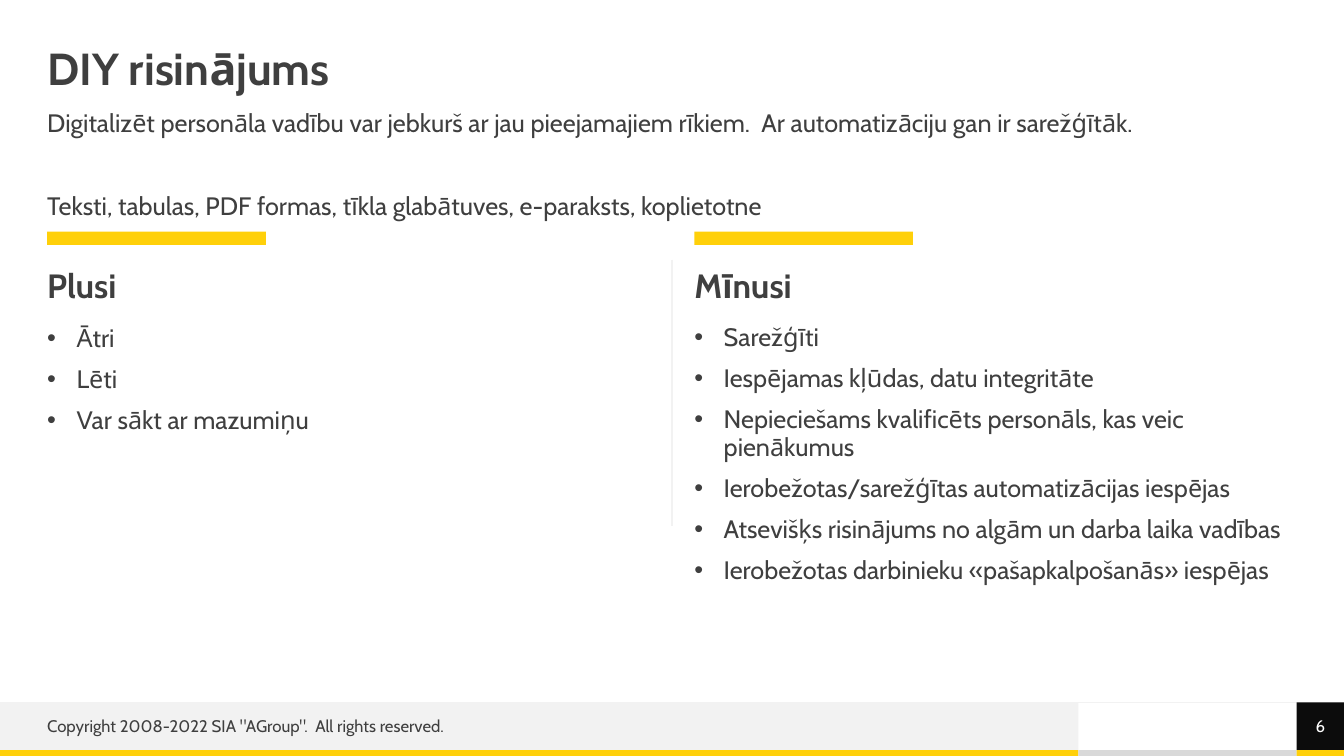
import pptx
import pptx.util
import pptx.dml.color
import pptx.enum.shapes
import pptx.enum.text
import pptx.oxml
import pptx.oxml.ns

Cm = pptx.util.Cm
Pt = pptx.util.Pt
ALIGN = pptx.enum.text.PP_ALIGN
ANCHOR = pptx.enum.text.MSO_ANCHOR

COLORS = {
    "text": "3F3F3F",
    "yellow": "FFD00A",
    "pale": "F2F2F2",
    "gray": "D9D9D9",
    "black": "0C0C0C",
    "white": "FFFFFF",
}
WIDTH, HEIGHT = 33.87, 19.05
MARGIN = 1.19
STRIP = 0.15                      # thin band along the bottom edge
FOOTER_TOP, FOOTER_WIDTH = 17.7, 27.18
BADGE_LEFT = WIDTH - MARGIN
COLUMN_WIDTH = 15.19


def rgb(name):
    return pptx.dml.color.RGBColor.from_string(COLORS[name])


class SlideBuilder:
    font = "Cabin"
    frame_format = {
        "word_wrap": True,
        "margin_left": 0, "margin_right": 0,
        "margin_top": 0, "margin_bottom": 0,
    }

    def __init__(self, slide):
        self.slide = slide

    def fill_text(self, shape, lines, size, color="text", bold=False, bullets=False,
                  anchor=ANCHOR.TOP, align=ALIGN.LEFT, spacing=0.9, gap=10):
        frame = shape.text_frame
        for key, value in {**self.frame_format, "vertical_anchor": anchor}.items():
            setattr(frame, key, value)
        for index, line in enumerate(lines):
            paragraph = frame.add_paragraph() if index else frame.paragraphs[0]
            paragraph_format = {"alignment": align, "line_spacing": spacing,
                                "space_before": Pt(gap if index else 0)}
            for key, value in paragraph_format.items():
                setattr(paragraph, key, value)
            if bullets:
                self.bullet(paragraph)
            run = paragraph.add_run()
            run.text = line
            font_format = {"name": self.font, "size": Pt(size), "bold": bold}
            for key, value in font_format.items():
                setattr(run.font, key, value)
            run.font.color.rgb = rgb(color)

    def bullet(self, paragraph):
        properties = paragraph._p.get_or_add_pPr()
        properties.set("marL", str(Cm(0.74)))
        properties.set("indent", str(-Cm(0.74)))
        namespace = pptx.oxml.ns.nsdecls("a")
        for xml in (
            f'<a:buClr {namespace}><a:srgbClr val="{COLORS["text"]}"/></a:buClr>',
            f'<a:buFont {namespace} typeface="Arial"/>',
            f'<a:buChar {namespace} char="•"/>',
        ):
            properties.append(pptx.oxml.parse_xml(xml))

    def text(self, left, top, width, height, lines, size, **style):
        box = self.slide.shapes.add_textbox(Cm(left), Cm(top), Cm(width), Cm(height))
        self.fill_text(box, lines, size, **style)

    def bar(self, left, top, width, height, color):
        shape = self.slide.shapes.add_shape(
            pptx.enum.shapes.MSO_SHAPE.RECTANGLE,
            Cm(left), Cm(top), Cm(width), Cm(height))
        shape.shadow.inherit = False
        shape.fill.solid()
        shape.fill.fore_color.rgb = rgb(color)
        shape.line.fill.background()
        return shape

    def rule(self, x1, y1, x2, y2):
        line = self.slide.shapes.add_connector(
            pptx.enum.shapes.MSO_CONNECTOR.STRAIGHT, Cm(x1), Cm(y1), Cm(x2), Cm(y2))
        line.line.color.rgb = rgb("pale")
        line.line.width = Pt(0.75)
        line._element.spPr.append(
            pptx.oxml.parse_xml(f'<a:effectLst {pptx.oxml.ns.nsdecls("a")}/>'))


def main():
    deck = pptx.Presentation()
    deck.slide_width, deck.slide_height = Cm(WIDTH), Cm(HEIGHT)
    page = SlideBuilder(deck.slides.add_slide(deck.slide_layouts[6]))

    # Footer
    strip_top = HEIGHT - STRIP
    page.bar(0, FOOTER_TOP, FOOTER_WIDTH, strip_top - FOOTER_TOP, "pale")
    page.bar(0, strip_top, FOOTER_WIDTH, STRIP, "yellow")
    page.bar(FOOTER_WIDTH, strip_top, BADGE_LEFT - FOOTER_WIDTH, STRIP, "gray")
    page.bar(BADGE_LEFT, strip_top, MARGIN, STRIP, "yellow")
    page.rule(WIDTH, FOOTER_TOP, 0, FOOTER_TOP)
    page.text(MARGIN, 17.88, 15.72, 0.81,
              ['Copyright 2008-2022 SIA "AGroup".  All rights reserved.'],
              12, anchor=ANCHOR.MIDDLE, spacing=1.0)
    page_number = page.bar(BADGE_LEFT, FOOTER_TOP, MARGIN, strip_top - FOOTER_TOP, "black")
    page.fill_text(page_number, ["6"], 12, color="white", spacing=1.0,
                   anchor=ANCHOR.MIDDLE, align=ALIGN.CENTER)

    # Title and introduction
    content_width = WIDTH - 2 * MARGIN
    page.text(MARGIN, MARGIN, content_width, 1.19, ["DIY risinājums"], 32,
              bold=True, anchor=ANCHOR.MIDDLE)
    introduction = [
        "Digitalizēt personāla vadību var jebkurš ar jau pieejamajiem rīkiem.  "
        "Ar automatizāciju gan ir sarežģītāk.",
        "Teksti, tabulas, PDF formas, tīkla glabātuves, e-paraksts, koplietotne",
    ]
    page.text(MARGIN, 2.79, content_width, 1, introduction, 18, gap=39.6)

    # Pros and cons
    columns = [
        (MARGIN, 8.2, "Plusi", ["Ātri", "Lēti", "Var sākt ar mazumiņu"]),
        (17.5, 8.18, "Mīnusi", [
            "Sarežģīti",
            "Iespējamas kļūdas, datu integritāte",
            "Nepieciešams kvalificēts personāls, kas veic pienākumus",
            "Ierobežotas/sarežģītas automatizācijas iespējas",
            "Atsevišķs risinājums no algām un darba laika vadības",
            "Ierobežotas darbinieku «pašapkalpošanās» iespējas",
        ]),
    ]
    for left, list_top, heading, points in columns:
        page.bar(left, 5.84, 5.51, 0.33, "yellow")
        page.text(left, 6.78, COLUMN_WIDTH, 1, [heading], 24, bold=True)
        page.text(left, list_top, COLUMN_WIDTH, 6.1, points, 18, bullets=True)
    page.rule(WIDTH / 2, 6.55, WIDTH / 2, 13.26)

    deck.save("out.pptx")


if __name__ == "__main__":
    main()
